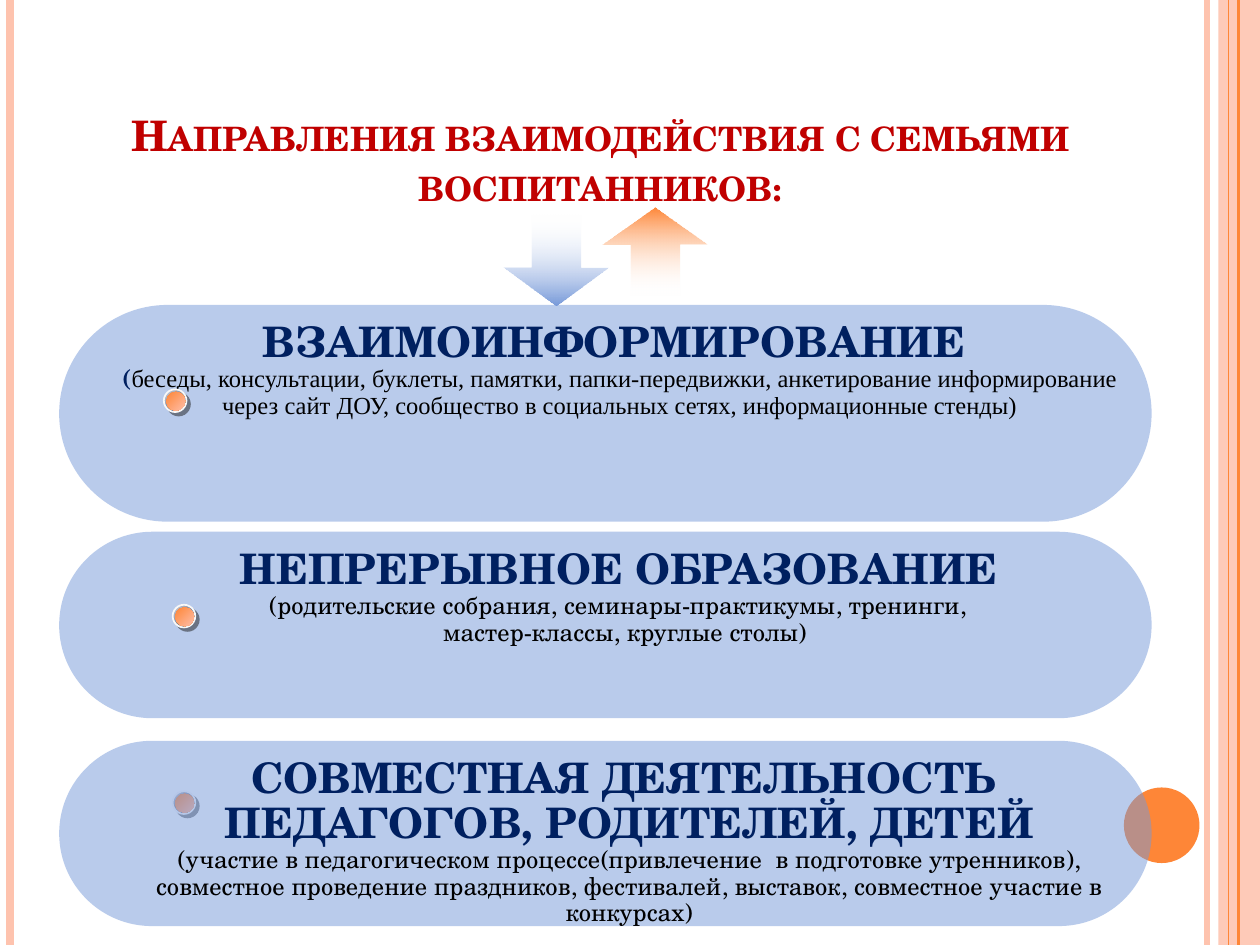
from dataclasses import dataclass

from pptx import Presentation
from pptx import util as u
from pptx.dml.color import RGBColor
from pptx.enum import shapes, text
from pptx.oxml.ns import qn
from lxml import etree


@dataclass
class Theme:
    face: str = "TeX Gyre Schola"
    plain: str = "Times New Roman"
    red: str = "C00000"
    navy: str = "002060"
    black: str = "000000"
    blue: str = "7598D9"
    peach: str = "FEC3AE"
    orange: str = "FE8637"
    pale: str = "FEBEA8"
    white: str = "FFFFFF"
    rim: tuple = ("DDDDE1", "223864")
    edge: str = "F8F8F8"
    shade: str = "1C1C1C"
    big: int = 24
    small: int = 14


theme = Theme()
kinds = shapes.MSO_SHAPE


def write(par, words, size=theme.small, face=theme.face, color=theme.black, bold=False):
    run = par.add_run()
    run.text = words
    font = run.font
    font.size, font.name, font.bold = u.Pt(size), face, bold
    font.color.rgb = RGBColor.from_string(color)
    return run


def draw(parent, kind, box, colors, alphas=(100, 100), angle=0):
    """Add a borderless shape with a plain fill (one colour) or a gradient (two)."""
    shape = parent.add_shape(kind, *map(u.Inches, box))
    shape.shadow.inherit = False
    shape.line.fill.background()
    if len(colors) == 1:
        shape.fill.solid()
        parts = [shape.fill.fore_color]
    else:
        shape.fill.gradient()
        shape.fill.gradient_angle = angle
        parts = [stop.color for stop in shape.fill.gradient_stops]
    for part, color in zip(parts, colors):
        part.rgb = RGBColor.from_string(color)
    for node, alpha in zip(shape._element.spPr.iter(qn("a:srgbClr")), alphas):
        if alpha < 100:
            etree.SubElement(node, qn("a:alpha"), val=str(alpha * 1000))
    return shape


deck = Presentation()
deck.slide_width, deck.slide_height = u.Inches(10), u.Inches(7.5)
slide = deck.slides.add_slide(deck.slide_layouts[5])
tree = slide.shapes

# Side stripes
draw(tree, kinds.RECTANGLE, (9.67, 0, 0.33, 7.5), [theme.peach], [87])
stripes = [
    (9.58, theme.peach, 3),
    (0.08, theme.peach, 4.5),
    (9.83, theme.orange, 1.5),
    (9.75, theme.orange, 0.75),
]
for left, color, width in stripes:
    line = tree.add_connector(
        shapes.MSO_CONNECTOR.STRAIGHT, u.Inches(left), 0, u.Inches(left), u.Inches(7.5)
    )
    line.line.width = u.Pt(width)
    line.line.color.rgb = RGBColor.from_string(color)
    etree.SubElement(line._element.spPr, qn("a:effectLst"))
draw(tree, kinds.OVAL, (8.92, 6.25, 0.6, 0.6), [theme.orange])

# Title
title = tree.title
title.left, title.top, title.width, title.height = map(u.Inches, (0.86, 0.47, 7.81, 1.25))
frame = title.text_frame
frame.word_wrap = True
frame.auto_size = text.MSO_AUTO_SIZE.NONE
frame.vertical_anchor = text.MSO_ANCHOR.BOTTOM
head = frame.paragraphs[0]
head.alignment = text.PP_ALIGN.CENTER
run = write(head, "Направления взаимодействия с семьями воспитанников:",
            size=theme.big, color=theme.red, bold=True)
run.font._element.set("cap", "small")

# Arrows down and up
for box, color, turn in [
    ((4.05, 1.65, 0.72, 0.83), theme.blue, 90),
    ((4.85, 1.58, 0.7, 0.83), theme.orange, 270),
]:
    arrow = draw(tree, kinds.RIGHT_ARROW, box, [theme.white, color], (0, 100))
    arrow.rotation = turn
    arrow.adjustments[0], arrow.adjustments[1] = 0.465, 0.421

# Beads: the last one lies under its panel, the others on top
under, over = [(1.37, 6.28)], [(1.37, 4.8), (1.3, 3.09)]

main = dict(size=theme.big, color=theme.navy, bold=True)
panels = [
    (2.42, 1.72, (0.78, 2.5, 8.28, 0.89), [
        [("ВЗАИМОИНФОРМИРОВАНИЕ ", main)],
        [("(", dict(color=theme.navy, bold=True)),
         ("беседы, консультации, буклеты, памятки, папки-передвижки, анкетирование "
          "информирование через сайт ДОУ, сообщество в социальных сетях, "
          "информационные стенды)", dict(face=theme.plain))],
    ]),
    (4.22, 1.48, (1.33, 4.3, 7.26, 0.89), [
        [("НЕПРЕРЫВНОЕ ОБРАЗОВАНИЕ ", main)],
        [("(родительские собрания, семинары-практикумы, тренинги,  ", {})],
        [("мастер-классы, круглые столы)", {})],
    ]),
    (5.88, 1.47, (1.09, 5.96, 7.81, 1.46), [
        [("СОВМЕСТНАЯ ДЕЯТЕЛЬНОСТЬ ", main)],
        [("ПЕДАГОГОВ, РОДИТЕЛЕЙ, ДЕТЕЙ", main)],
        [("(участие в педагогическом процессе(привлечение  в подготовке утренников), "
          "совместное проведение праздников, фестивалей, выставок, совместное участие "
          "в конкурсах)", {})],
    ]),
]

for stage in (under, panels, over):
    if stage is panels:
        for top, height, box, lines in panels:
            panel = draw(tree, kinds.ROUNDED_RECTANGLE, (0.47, top, 8.67, height),
                         [theme.blue], [50])
            panel.adjustments[0] = 0.5
            frame = tree.add_textbox(*map(u.Inches, box)).text_frame
            frame.word_wrap = True
            frame.auto_size = text.MSO_AUTO_SIZE.SHAPE_TO_FIT_TEXT
            for row, runs in enumerate(lines):
                par = frame.add_paragraph() if row else frame.paragraphs[0]
                par.alignment = text.PP_ALIGN.CENTER
                par.line_spacing = 0.9
                for words, style in runs:
                    write(par, words, **style)
        continue
    for left, top in stage:
        group = tree.add_group_shape().shapes
        rim = draw(group, kinds.OVAL, (left, top, 0.18, 0.18), theme.rim, angle=315)
        rim.line.color.rgb = RGBColor.from_string(theme.edge)
        rim.line.width = u.Pt(1)
        glow = etree.SubElement(
            rim._element.spPr.find(qn("a:effectLst")), qn("a:outerShdw"),
            dist=str(u.Pt(2.8)), dir="2700000", algn="ctr", rotWithShape="0",
        )
        tint = etree.SubElement(glow, qn("a:srgbClr"), val=theme.shade)
        etree.SubElement(tint, qn("a:alpha"), val="50000")
        draw(group, kinds.OVAL, (left + 0.02, top + 0.02, 0.15, 0.15),
             [theme.orange, theme.pale], angle=315)

deck.save("out.pptx")
